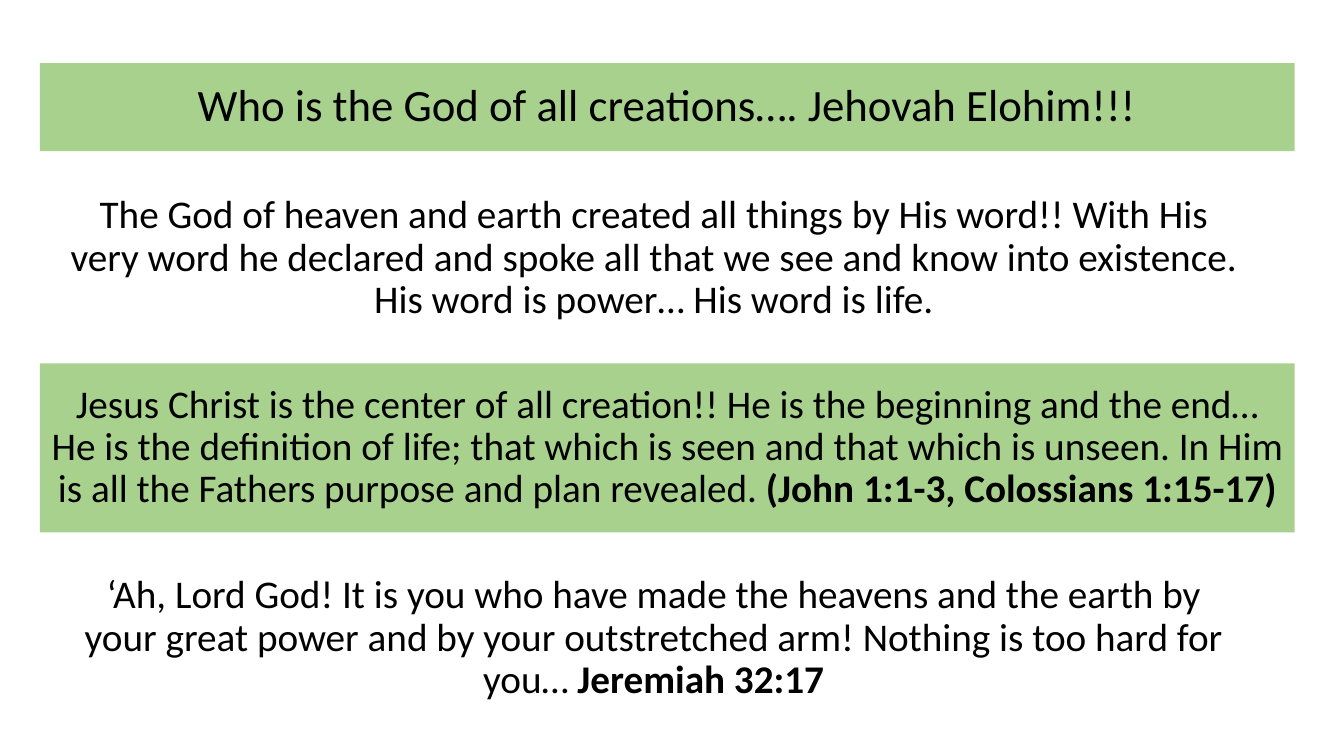
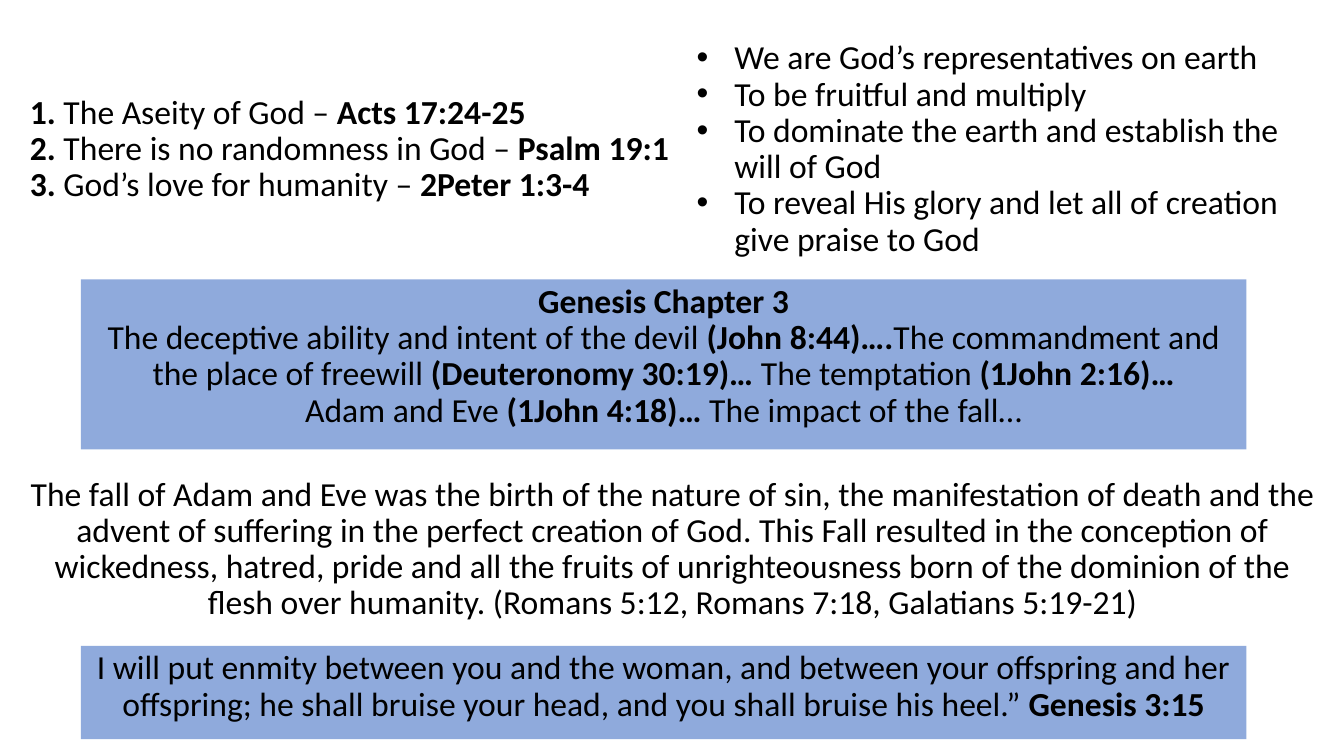
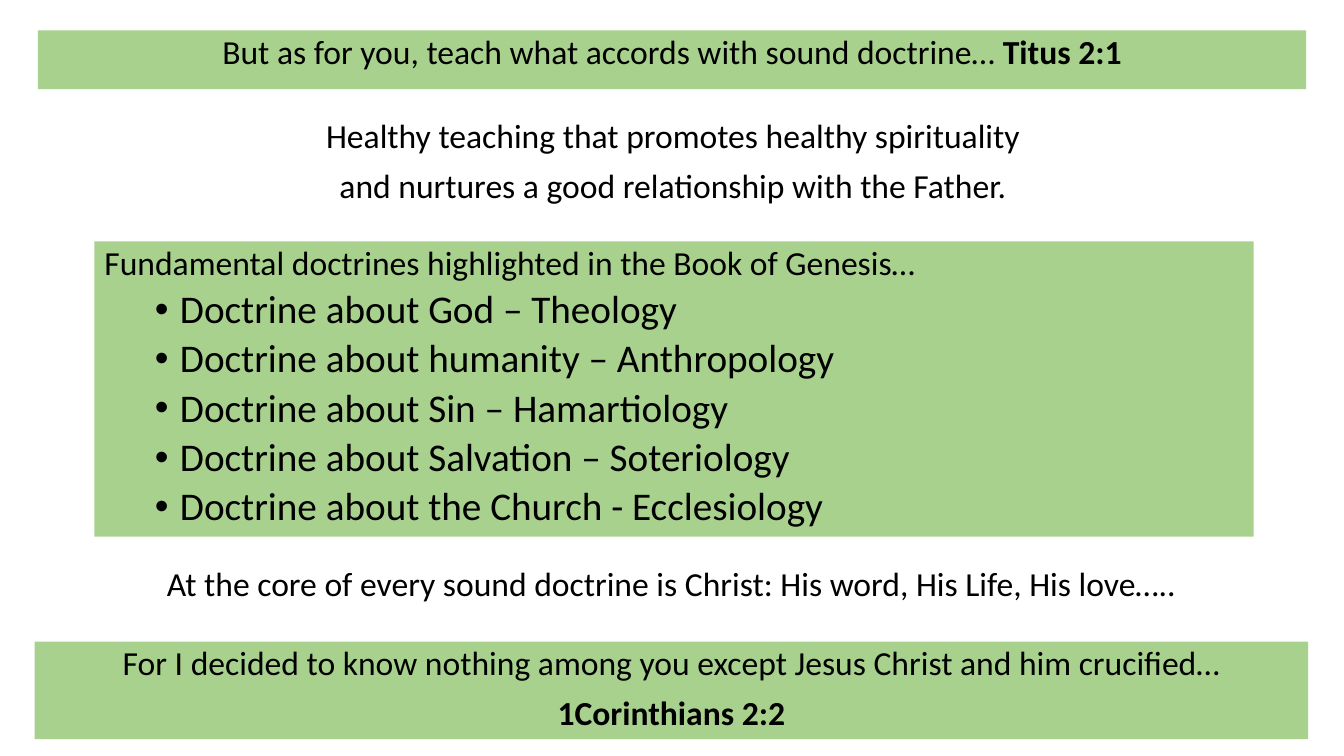
import pptx
import pptx.dml.color
import pptx.enum.shapes
import pptx.enum.text
import pptx.oxml.ns
import pptx.util
import lxml.etree

PX = 9525
BLACK = pptx.dml.color.RGBColor(0x00, 0x00, 0x00)
GREEN = pptx.dml.color.RGBColor(0xA9, 0xD1, 0x8E)
BLUE = pptx.dml.color.RGBColor(0x8F, 0xAA, 0xDC)
FONT = "Calibri"
TOP = pptx.enum.text.MSO_ANCHOR.TOP
MIDDLE = pptx.enum.text.MSO_ANCHOR.MIDDLE
LEFT = pptx.enum.text.PP_ALIGN.LEFT
CENTER = pptx.enum.text.PP_ALIGN.CENTER
RECTANGLE = pptx.enum.shapes.MSO_SHAPE.RECTANGLE


def para_format(size, alignment=CENTER, before=0, level=0, indent=0, hanging=0):
    return {
        "para": {
            "alignment": alignment,
            "line_spacing": 0.9,
            "space_before": pptx.util.Pt(before),
            "level": level,
        },
        "font": {"name": FONT, "size": pptx.util.Pt(size)},
        "indent": indent,
        "hanging": hanging,
    }


FORMATS = {
    "title": para_format(32),
    "large": para_format(28),
    "plain": para_format(24),
    "list": para_format(24, LEFT),
    "bullet": para_format(24, LEFT, indent=36, hanging=36),
    "spaced": para_format(24, before=10),
    "heading": para_format(24, LEFT, before=10),
    "doctrine": para_format(28, LEFT, before=5, level=1, indent=72, hanging=24),
}

SLIDES = [
    [
        (38, 60, 1195, 84, GREEN, MIDDLE, [
            ("title", "Who is the God of all creations…. Jehovah Elohim!!!"),
        ]),
        (56, 173, 1133, 146, None, MIDDLE, [
            ("large", "The God of heaven and earth created all things by His word!! "
             "With His very word he declared and spoke all that we see and know into "
             "existence. His word is power… His word is life."),
        ]),
        (38, 346, 1195, 161, GREEN, MIDDLE, [
            ("large", "Jesus Christ is the center of all creation!! He is the beginning "
             "and the end… He is the definition of life; that which is seen and that "
             "which is unseen. In Him is all the Fathers purpose and plan revealed. "
             "*(John 1:1-3, Colossians 1:15-17)*"),
        ]),
        (56, 535, 1133, 146, None, MIDDLE, [
            ("large", "‘Ah, Lord God! It is you who have made the heavens and the earth "
             "by your great power and by your outstretched arm! Nothing is too hard "
             "for you… *Jeremiah 32:17*"),
        ]),
    ],
    [
        (19, 18, 635, 249, None, MIDDLE, [
            ("list", "*1. *The Aseity of God – *Acts 17:24-25*"),
            ("list", "*2. *There is no randomness in God – *Psalm 19:1*"),
            ("list", "*3. *God’s love for humanity – *2Peter 1:3-4*"),
        ]),
        (654, 18, 608, 249, None, MIDDLE, [
            ("bullet", "We are God’s representatives on earth"),
            ("bullet", "To be fruitful and multiply"),
            ("bullet", "To dominate the earth and establish the will of God"),
            ("bullet", "To reveal His glory and let all of creation give praise to God"),
        ]),
        (77, 266, 1110, 162, BLUE, TOP, [
            ("plain", "*Genesis Chapter 3*"),
            ("plain", "The deceptive ability and intent of the devil *(John 8:44)….*"
             "The commandment and the place of freewill *(Deuteronomy 30:19)… *"
             "The temptation *(1John 2:16)…*"),
            ("plain", "Adam and Eve *(1John 4:18)… *The impact of the fall…"),
        ]),
        (19, 454, 1243, 139, None, MIDDLE, [
            ("plain", "The fall of Adam and Eve was the birth of the nature of sin, the "
             "manifestation of death and the advent of suffering in the perfect creation "
             "of God. This Fall resulted in the conception of wickedness, hatred, pride "
             "and all the fruits of unrighteousness born of the dominion of the flesh "
             "over humanity. (Romans 5:12, Romans 7:18, Galatians 5:19-21)"),
        ]),
        (77, 615, 1110, 89, BLUE, TOP, [
            ("spaced", "I will put enmity between you and the woman, and between your "
             "offspring and her offspring; he shall bruise your head, and you shall "
             "bruise his heel.” *Genesis 3:15*"),
        ]),
    ],
    [
        (36, 29, 1208, 56, GREEN, TOP, [
            ("spaced", "But as for you, teach what accords with sound doctrine… *Titus 2:1*"),
        ]),
        (37, 109, 1208, 97, None, TOP, [
            ("spaced", "Healthy teaching that promotes healthy spirituality"),
            ("spaced", "and nurtures a good relationship with the Father."),
        ]),
        (90, 230, 1104, 281, GREEN, TOP, [
            ("heading", "Fundamental doctrines highlighted in the Book of Genesis…"),
            ("doctrine", "Doctrine about God – Theology"),
            ("doctrine", "Doctrine about humanity – Anthropology"),
            ("doctrine", "Doctrine about Sin – Hamartiology"),
            ("doctrine", "Doctrine about Salvation – Soteriology"),
            ("doctrine", "Doctrine about the Church - Ecclesiology"),
        ]),
        (33, 536, 1213, 50, None, TOP, [
            ("spaced", "At the core of every sound doctrine is Christ: His word, His Life, "
             "His love….."),
        ]),
        (33, 611, 1213, 93, GREEN, TOP, [
            ("spaced", "For I decided to know nothing among you except Jesus Christ and "
             "him crucified…"),
            ("spaced", "*1Corinthians 2:2*"),
        ]),
    ],
]


def add_bullet(p, indent, hanging):
    pPr = p._p.get_or_add_pPr()
    pPr.set("marL", str(indent * PX))
    pPr.set("indent", str(-hanging * PX))
    for tag, key, value in (("a:buFont", "typeface", "Arial"), ("a:buChar", "char", "•")):
        lxml.etree.SubElement(pPr, pptx.oxml.ns.qn(tag)).set(key, value)


prs = pptx.Presentation()
prs.slide_width = 1280 * PX
prs.slide_height = 720 * PX

for boxes in SLIDES:
    s = prs.slides.add_slide(prs.slide_layouts[6])
    for left, top, width, height, fill, anchor, paragraphs in boxes:
        box = [n * PX for n in (left, top, width, height)]
        if fill is None:
            sp = s.shapes.add_textbox(*box)
        else:
            sp = s.shapes.add_shape(RECTANGLE, *box)
            sp.shadow.inherit = False
            sp.fill.solid()
            sp.fill.fore_color.rgb = fill
            sp.line.fill.background()
        tf = sp.text_frame
        tf.word_wrap = True
        tf.vertical_anchor = anchor
        for i, (name, text) in enumerate(paragraphs):
            fmt = FORMATS[name]
            p = tf.add_paragraph() if i else tf.paragraphs[0]
            for key, value in fmt["para"].items():
                setattr(p, key, value)
            if fmt["hanging"]:
                add_bullet(p, fmt["indent"], fmt["hanging"])
            for j, part in enumerate(text.split("*")):
                if part:
                    r = p.add_run()
                    r.text = part
                    for key, value in fmt["font"].items():
                        setattr(r.font, key, value)
                    r.font.bold = j % 2 == 1
                    r.font.color.rgb = BLACK

prs.save("out.pptx")
